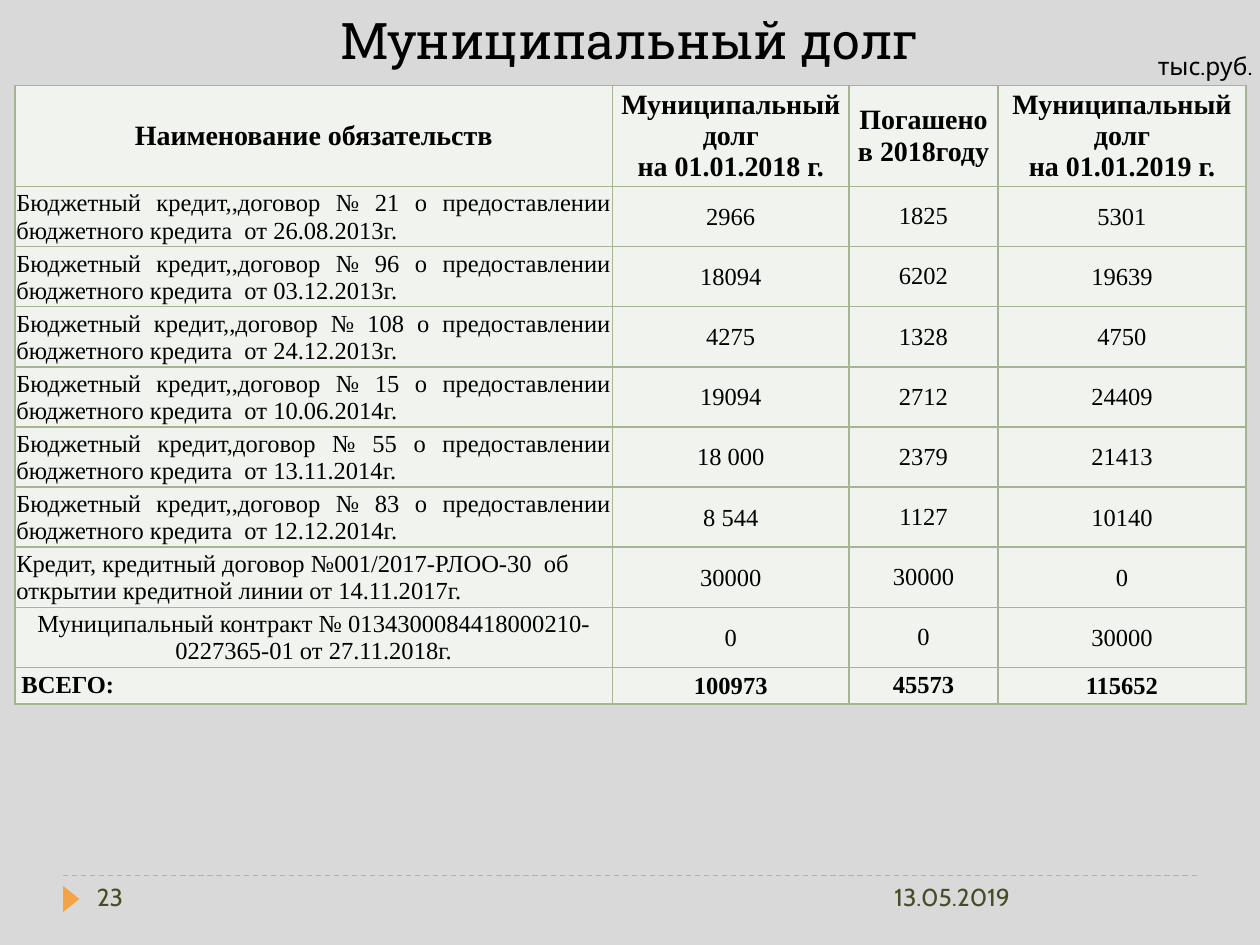
"""Build the municipal debt slide: title, debt table and footer."""
from lxml.etree import SubElement
from pptx import Presentation
from pptx.dml.color import RGBColor
from pptx.enum.dml import MSO_LINE
from pptx.enum.shapes import MSO_CONNECTOR, MSO_SHAPE
from pptx.enum.text import MSO_ANCHOR as Anchor, PP_ALIGN as Align
from pptx.oxml.ns import qn
from pptx.util import Inches, Pt

BLACK = RGBColor(0x00, 0x00, 0x00)
OLIVE = RGBColor(0x44, 0x4D, 0x26)
ORANGE = RGBColor(0xF3, 0xA4, 0x47)
GREEN = RGBColor(0xA5, 0xB5, 0x92)
PALE = RGBColor(0xF0, 0xF3, 0xEE)
GREY = RGBColor(0xD9, 0xD9, 0xD9)

CREDIT = "Бюджетный кредит,{}договор № {} о предоставлении бюджетного кредита  от {}г."
HEADER = ["Наименование обязательств", "Муниципальный долг\nна 01.01.2018 г.",
          "Погашено в 2018году", "Муниципальный долг\nна 01.01.2019 г."]
CREDITS = [
    (",", "21", "26.08.2013", "2966", "1825", "5301"),
    (",", "96", "03.12.2013", "18094", "6202", "19639"),
    (",", "108", "24.12.2013", "4275", "1328", "4750"),
    (",", "15", "10.06.2014", "19094", "2712", "24409"),
    ("", "55", "13.11.2014", "18 000", "2379", "21413"),
    (",", "83", "12.12.2014", "8 544", "1127", "10140"),
]
OTHERS = [
    ["Кредит, кредитный договор №001/2017-РЛОО-30  об открытии кредитной линии от 14.11.2017г.",
     "30000", "30000", "0"],
    ["Муниципальный контракт № 0134300084418000210-0227365-01 от 27.11.2018г.", "0", "0", "30000"],
    ["ВСЕГО:", "100973", "45573", "115652"],
]
ROWS = [HEADER] + [[CREDIT.format(*credit[:3]), *credit[3:]] for credit in CREDITS] + OTHERS
NAME_ALIGNS = [Align.CENTER] + [Align.JUSTIFY] * len(CREDITS) + [Align.LEFT, Align.CENTER, Align.LEFT]
COLUMN_WIDTHS = [4.74, 1.88, 1.18, 1.97]
ROW_HEIGHTS = [0.79] + [0.475] * (len(ROWS) - 2) + [0.29]


def write(frame, text, align, **font_values):
    frame.text = text
    for para in frame.paragraphs:
        para.alignment = align
        for span in para.runs:
            span.font.color.rgb = font_values["color"]
            for name in ("name", "size", "bold"):
                setattr(span.font, name, font_values.get(name))


def add_border(cell, side):
    line = SubElement(cell._tc.get_or_add_tcPr(), qn(f"a:{side}"), w=str(Pt(1)))
    fill = SubElement(line, qn("a:solidFill"))
    SubElement(fill, qn("a:srgbClr"), val=str(GREEN))


deck = Presentation()
deck.slide_width, deck.slide_height = Inches(10), Inches(7.5)
page = deck.slides.add_slide(deck.slide_layouts[5])
page.background.fill.solid()
page.background.fill.fore_color.rgb = GREY

footer_top = Inches(6.95)
margin = int(deck.slide_width * 0.05)
rule = page.shapes.add_connector(MSO_CONNECTOR.STRAIGHT, margin, footer_top,
                                 deck.slide_width - margin, footer_top)
rule.line.color.rgb = ORANGE
rule.line.width = Pt(0.75)
rule.line.dash_style = MSO_LINE.DASH
SubElement(rule._element.spPr, qn("a:effectLst"))

marker = page.shapes.add_shape(MSO_SHAPE.ISOSCELES_TRIANGLE, Inches(0.46), Inches(7.07),
                               Inches(0.21), Inches(0.13))
marker.rotation = 90
marker.shadow.inherit = False
marker.fill.solid()
marker.fill.fore_color.rgb = ORANGE
marker.line.fill.background()

title = page.shapes.title
title_place = {"left": margin, "top": 0, "width": deck.slide_width - 2 * margin,
               "height": int(deck.slide_height * 0.08)}
for name, value in title_place.items():
    setattr(title, name, value)
title.text_frame.vertical_anchor = Anchor.BOTTOM
write(title.text_frame, "Муниципальный долг", Align.CENTER,
      name="Roboto Slab", size=Pt(28.8), color=BLACK)

labels = [
    ("13.05.2019", 7, 6.95, 2.5, 0.4, OLIVE),
    ("23", 0.67, 6.95, 2.17, 0.4, OLIVE),
    ("тыс.руб.", 9.09, 0.36, 1.42, 0.34, BLACK),
]
for text, left, top, width, height, color in labels:
    box = page.shapes.add_textbox(*map(Inches, (left, top, width, height)))
    box.text_frame.word_wrap = True
    write(box.text_frame, text, Align.LEFT, name="Cabin", size=Pt(14), color=color)

table = page.shapes.add_table(len(ROWS), len(COLUMN_WIDTHS), Inches(0.12), Inches(0.68),
                              Inches(sum(COLUMN_WIDTHS)), Inches(sum(ROW_HEIGHTS))).table
for column, width in zip(table.columns, COLUMN_WIDTHS):
    column.width = Inches(width)
for row, height in zip(table.rows, ROW_HEIGHTS):
    row.height = Inches(height)

last = len(ROWS) - 1
for r, values in enumerate(ROWS):
    for c, text in enumerate(values):
        cell = table.cell(r, c)
        wide = r == 0 or c == 2 or (r == last and c == 0)
        side_margin = Inches(0.05 if wide else 0.01)
        cell_format = {"margin_left": side_margin, "margin_right": side_margin,
                       "margin_top": Inches(0 if wide else 0.01), "margin_bottom": 0,
                       "vertical_anchor": Anchor.MIDDLE}
        for name, value in cell_format.items():
            setattr(cell, name, value)
        for side in ("lnL", "lnR", "lnT", "lnB"):
            add_border(cell, side)
        cell.fill.solid()
        cell.fill.fore_color.rgb = PALE
        write(cell.text_frame, text, NAME_ALIGNS[r] if c == 0 else Align.CENTER,
              name="Times New Roman", size=Pt(14 if r else 16), bold=r in (0, last), color=BLACK)

deck.save("out.pptx")
